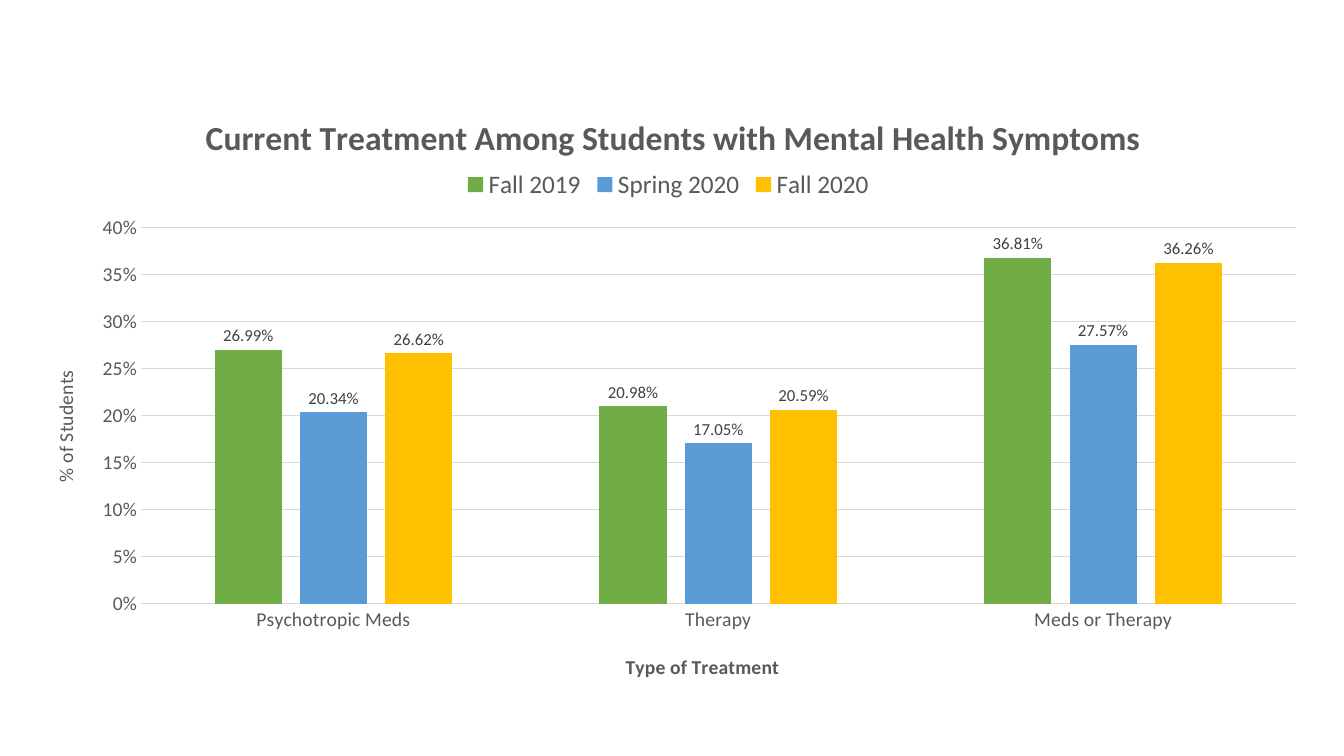
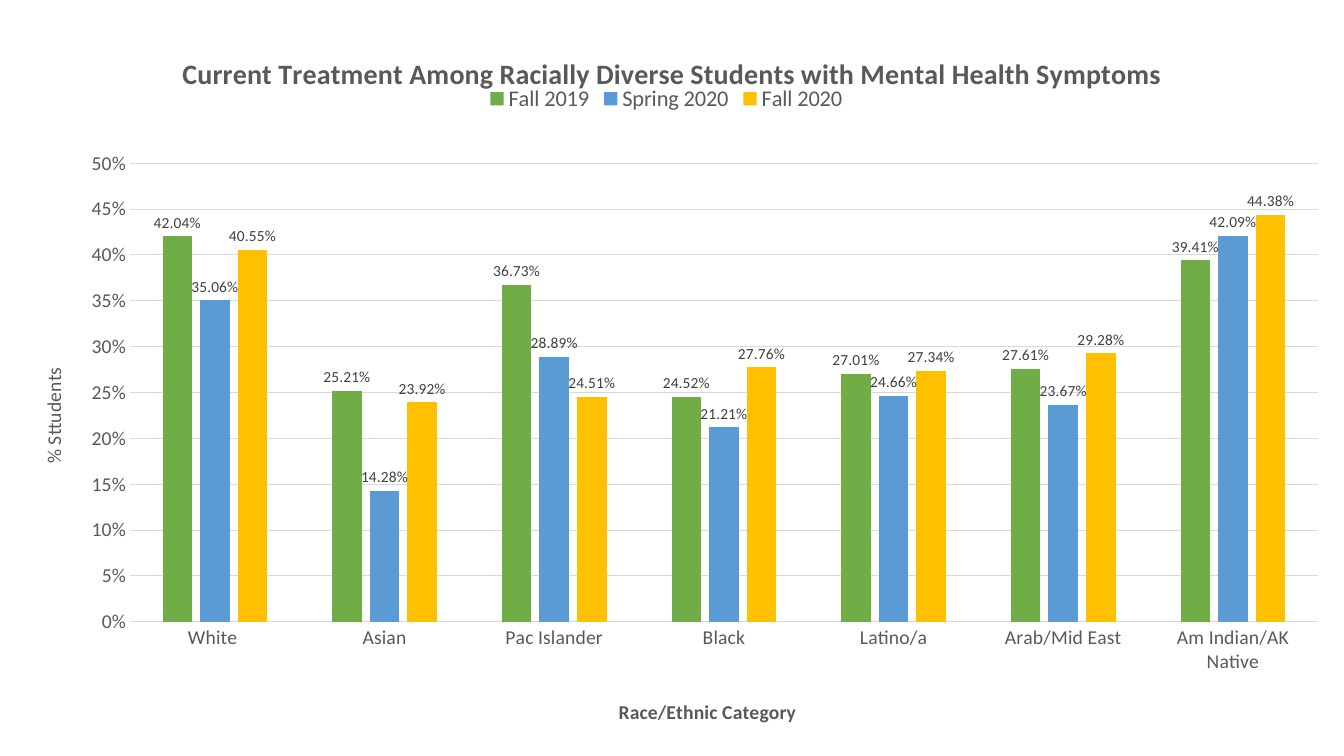
from pptx import Presentation, util as u
from pptx.chart.data import CategoryChartData
from pptx.dml.color import RGBColor
from pptx.enum import chart as kinds
from pptx.oxml import parse_xml
from pptx.oxml.ns import nsdecls, qn

# Shared look
FONT = "Calibri"
TEXT = RGBColor(0x59, 0x59, 0x59)
LABEL = RGBColor(0x40, 0x40, 0x40)
RULE = RGBColor(0xD9, 0xD9, 0xD9)
GREEN = RGBColor(0x70, 0xAD, 0x47)
BLUE = RGBColor(0x5B, 0x9B, 0xD5)
GOLD = RGBColor(0xFF, 0xC0, 0x00)
TERMS = [("Fall 2019", GREEN), ("Spring 2020", BLUE), ("Fall 2020", GOLD)]
AXIS_SIZE = 14

# Content: rows hold one value per term; places are inches on the slide
CHARTS = [
    {
        "title": "Current Treatment Among Students with Mental Health Symptoms",
        "category_title": "Type of Treatment",
        "value_title": "% of Students",
        "rows": [
            ("Psychotropic Meds", 0.2699, 0.2034, 0.2662),
            ("Therapy", 0.2098, 0.1705, 0.2059),
            ("Meds or Therapy", 0.3681, 0.2757, 0.3626),
        ],
        "top_value": 0.4,
        "sizes": {"title": 24, "legend": 18, "label": 12},
        "frame": (0.23, 0.86, 12.87, 6.05),
        "places": {
            "c:chart/c:title": (1.98, 1.08),
            "c:chart/c:legend": (4.56, 1.63),
            "c:chart/c:plotArea": (1.4, 2.26, 11.45, 3.73),
            ".//c:catAx/c:title": (6.17, 6.45),
            ".//c:valAx/c:title": (0.48, 3.64),
        },
    },
    {
        "title": "Current Treatment Among Racially Diverse Students "
                 "with Mental Health Symptoms",
        "category_title": "Race/Ethnic Category",
        "value_title": "% Sttudents",
        "rows": [
            ("White ", 0.4204, 0.3506, 0.4055),
            ("Asian", 0.2521, 0.1428, 0.2392),
            ("Pac Islander", 0.3673, 0.2889, 0.2451),
            ("Black", 0.2452, 0.2121, 0.2776),
            ("Latino/a", 0.2701, 0.2466, 0.2734),
            ("Arab/Mid East", 0.2761, 0.2367, 0.2928),
            ("Am Indian/AK Native", 0.3941, 0.4209, 0.4438),
        ],
        "top_value": 0.5,
        "sizes": {"title": 20, "legend": 16, "label": 11},
        "frame": (0.11, 0.22, 13.22, 7.12),
        "places": {
            "c:chart/c:title": (1.76, 0.48),
            "c:chart/c:legend": (4.79, 0.8),
            "c:chart/c:plotArea": (1.29, 1.62, 11.78, 4.55),
            ".//c:catAx/c:title": (6.1, 6.89),
            ".//c:valAx/c:title": (0.36, 3.61),
        },
    },
]


def style_font(font, size, color=TEXT, bold=False):
    font.name, font.size, font.bold = FONT, u.Pt(size), bold
    font.color.rgb = color


def write_title(owner, words, size, bold=True):
    """Title a chart or an axis."""
    frame = (owner.chart_title if hasattr(owner, "chart_title")
             else owner.axis_title).text_frame
    span = frame.paragraphs[0].add_run()
    span.text = words
    style_font(span.font, size, bold=bold)


def place_part(part, spot, frame):
    """Fix a chart part at a slide position, as shares of the chart frame."""
    left, top, width, height = frame
    shares = [(spot[0] - left) / width, (spot[1] - top) / height]
    shares += [length / side for length, side in zip(spot[2:], (width, height))]
    inner = '<c:layoutTarget val="inner"/>' if len(spot) == 4 else ""
    modes = '<c:xMode val="edge"/><c:yMode val="edge"/>'
    values = "".join(f'<c:{name} val="{share:.4f}"/>'
                     for name, share in zip("xywh", shares))
    layout = parse_xml(f'<c:layout {nsdecls("c")}><c:manualLayout>'
                       f'{inner}{modes}{values}</c:manualLayout></c:layout>')
    for old in part.findall(qn("c:layout")):
        part.remove(old)
    leading = part.xpath("c:tx | c:legendPos")
    part.insert(len(leading), layout)


def style_axes(chart, item):
    category, value = chart.category_axis, chart.value_axis
    for axis in (category, value):
        axis.major_tick_mark = axis.minor_tick_mark = kinds.XL_TICK_MARK.NONE
        style_font(axis.tick_labels.font, AXIS_SIZE)
    category.has_major_gridlines = False
    value.has_major_gridlines = True
    for line in (category.format.line, value.major_gridlines.format.line):
        line.color.rgb, line.width = RULE, u.Pt(0.75)
    value.format.line.fill.background()
    value.minimum_scale, value.maximum_scale = 0, item["top_value"]
    value.major_unit = 0.05
    value.tick_labels.number_format = "0%"
    value.tick_labels.number_format_is_linked = False
    write_title(category, item["category_title"], AXIS_SIZE)
    write_title(value, item["value_title"], AXIS_SIZE, bold=False)
    # Turn the value title to read upwards
    body = chart.element.xpath(".//c:valAx/c:title//a:bodyPr")[0]
    body.set("rot", "-5400000")
    body.set("vert", "horz")


def style_series(plot, label_size):
    plot.gap_width, plot.overlap = 219, -27
    plot.vary_by_categories = False
    for series, (_, color) in zip(plot.series, TERMS):
        series.format.fill.solid()
        series.format.fill.fore_color.rgb = color
        labels = series.data_labels
        labels.show_value = True
        labels.position = kinds.XL_LABEL_POSITION.OUTSIDE_END
        labels.number_format = "0.00%"
        labels.number_format_is_linked = False
        style_font(labels.font, label_size, LABEL)


def add_treatment_chart(page, item):
    names, *columns = zip(*item["rows"])
    data = CategoryChartData(number_format="0.00%")
    data.categories = names
    for (term, _), values in zip(TERMS, columns):
        data.add_series(term, values)
    chart = page.shapes.add_chart(
        kinds.XL_CHART_TYPE.COLUMN_CLUSTERED,
        *map(u.Inches, item["frame"]), data).chart
    sizes = item["sizes"]
    style_font(chart.font, 10, RGBColor(0, 0, 0))
    write_title(chart, item["title"], sizes["title"])
    chart.has_legend = True
    chart.legend.position = kinds.XL_LEGEND_POSITION.TOP
    chart.legend.include_in_layout = False
    style_font(chart.legend.font, sizes["legend"])
    style_axes(chart, item)
    style_series(chart.plots[0], sizes["label"])
    for query, spot in item["places"].items():
        place_part(chart.element.xpath(query)[0], spot, item["frame"])


def main():
    deck = Presentation()
    deck.slide_width, deck.slide_height = u.Inches(13.33), u.Inches(7.5)
    blank = deck.slide_layouts.get_by_name("Blank")
    for item in CHARTS:
        add_treatment_chart(deck.slides.add_slide(blank), item)
    deck.save("out.pptx")


if __name__ == "__main__":
    main()
